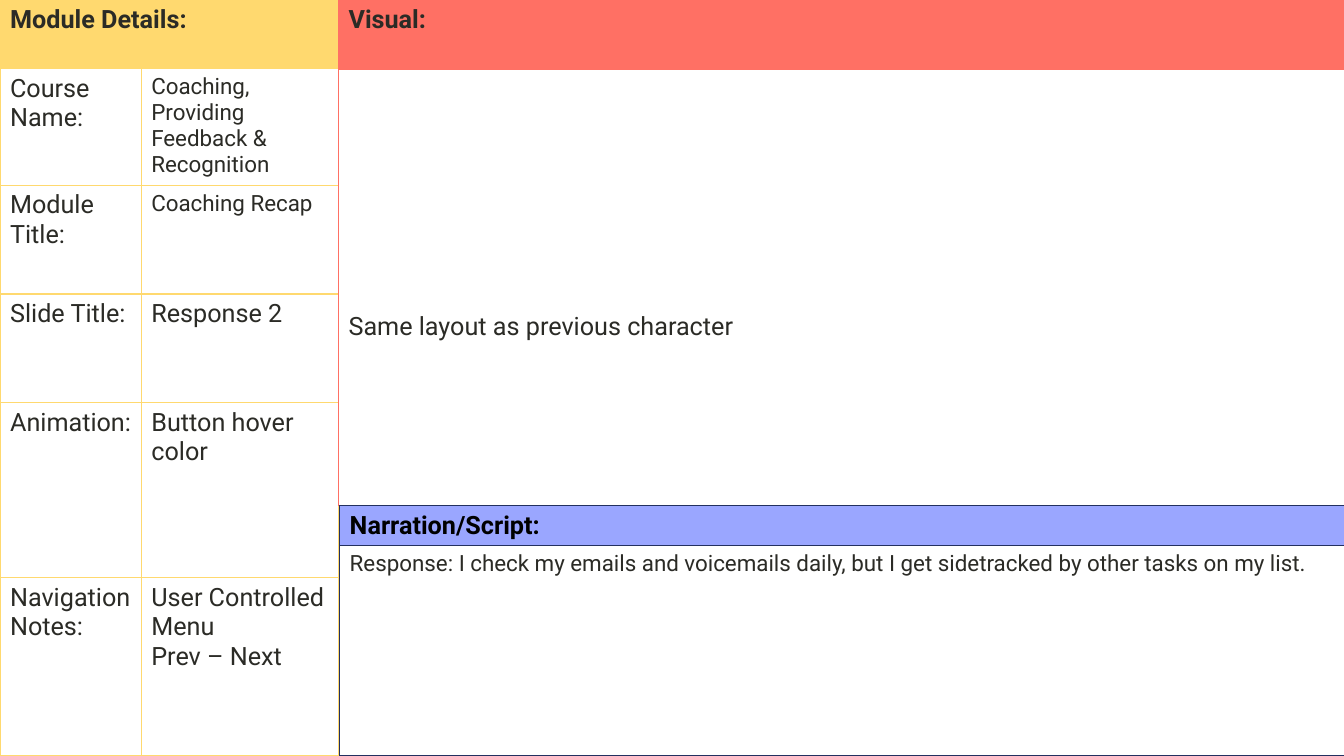
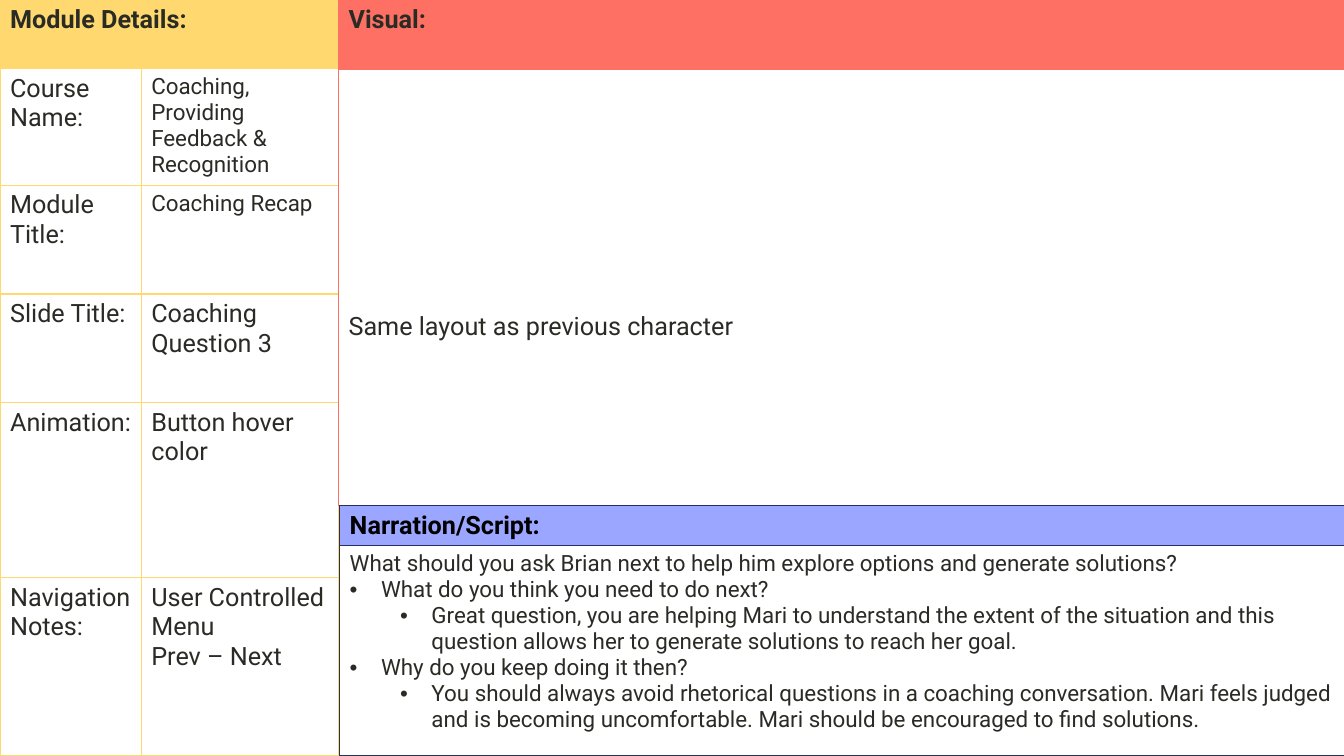
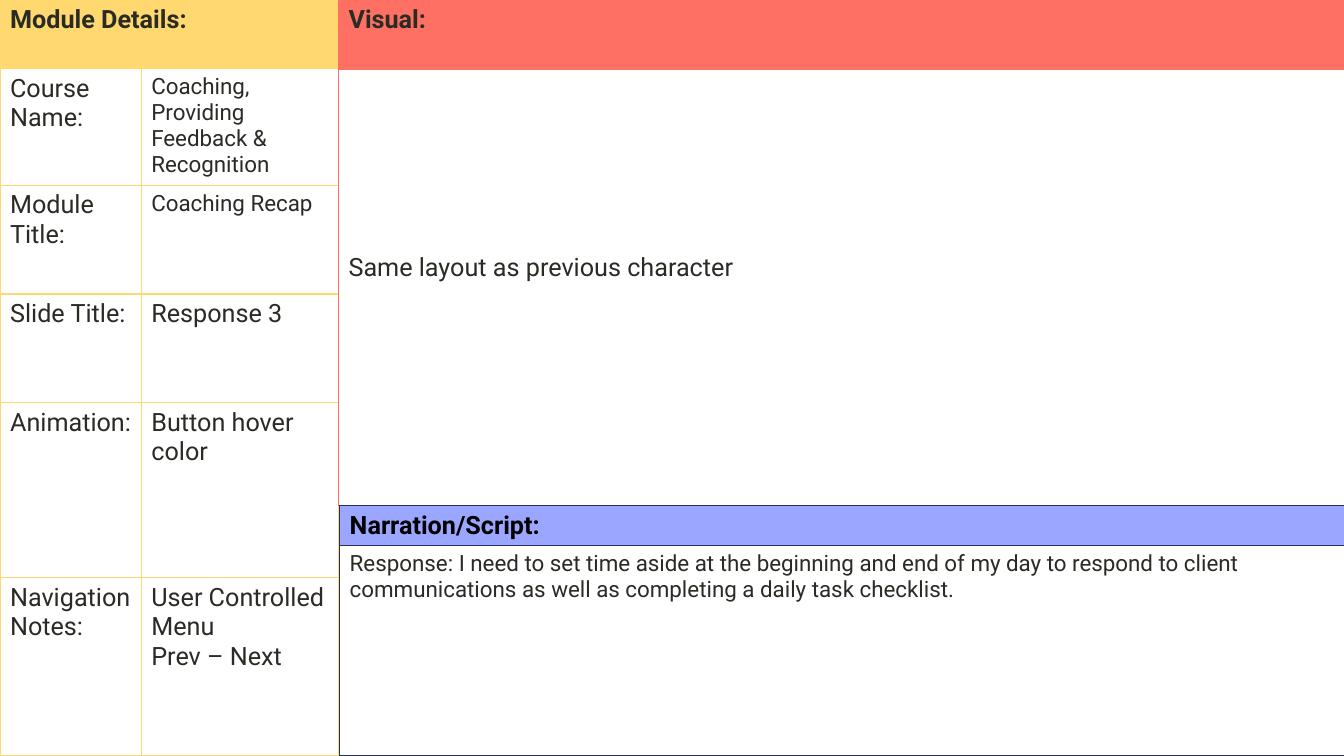
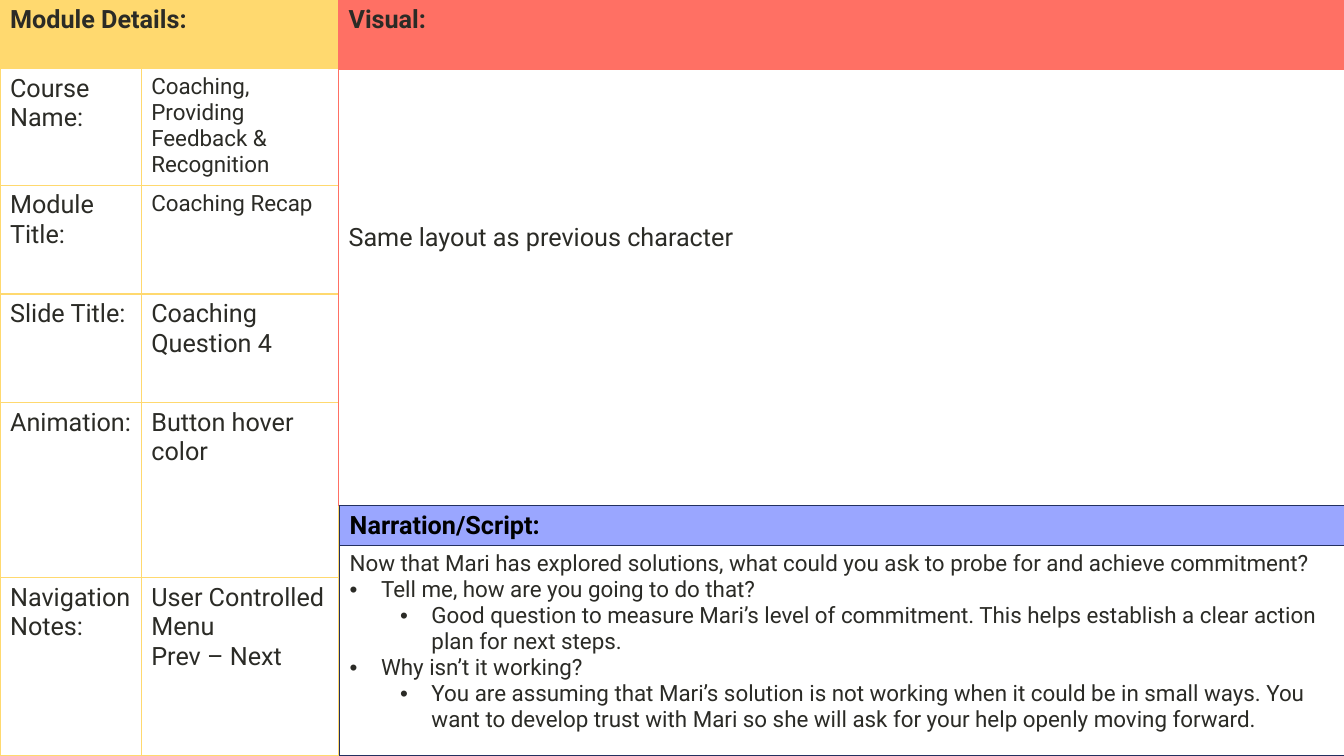
from dataclasses import dataclass

from pptx import Presentation
from pptx.dml.color import RGBColor
from pptx.oxml.ns import qn
from pptx.util import Cm, Pt
from lxml.etree import SubElement

FONT = "Roboto"
COLORS = {
    "background": "F9F9F9",
    "paper": "FFFFFF",
    "ink": "2B2B26",
    "black": "000000",
    "details": "FFD96F",
    "visual": "FF7064",
    "narration": "9AA6FF",
    "narration_line": "233060",
}
SLIDE_WIDTH, SLIDE_HEIGHT = 33.87, 19.05
DETAIL_COLUMNS = [3.56, 4.98]
DETAIL_ROWS = [1.73, 2.94, 2.74, 2.74, 4.41, 4.48]
VISUAL_LEFT, VISUAL_WIDTH = 8.53, 25.35
VISUAL_ROWS = [1.74, 11]
NARRATION_LEFT = 8.56
NARRATION_TOP, NARRATION_HEIGHT = 12.74, 1
SCRIPT_TOP, SCRIPT_HEIGHT = 13.75, 5.29
LINE_HEIGHT = 0.75
TOP_MARGIN = 0.13
BULLET_HANG = 0.79
LEVEL_STEP = 1.27


@dataclass(frozen=True)
class Line:
    text: str
    bullet_level: int | None = None


@dataclass(frozen=True)
class Block:
    """The text and look of one cell."""
    lines: list[Line]
    size: int = 18
    bold: bool = False
    color: str = "ink"
    fill: str = "paper"
    lines_down: int = 0


@dataclass(frozen=True)
class Storyboard:
    slide_title: str
    visual_lines_down: int
    narration: list[Line]


def block(*texts: str, size: int = 18) -> Block:
    return Block([Line(text) for text in texts], size)


def header(text: str, fill: str, color: str = "ink") -> Block:
    return Block([Line(text)], bold=True, color=color, fill=fill)


def rgb(name: str) -> RGBColor:
    return RGBColor.from_string(COLORS[name])


def set_borders(cell, color: str) -> None:
    properties = cell._tc.get_or_add_tcPr()
    for side in "LRTB":
        line = SubElement(properties, qn(f"a:ln{side}"), w=str(Pt(1)))
        fill = SubElement(line, qn("a:solidFill"))
        SubElement(fill, qn("a:srgbClr"), val=COLORS[color])


def set_bullet(paragraph, level: int) -> None:
    paragraph.level = level
    properties = paragraph._p.get_or_add_pPr()
    properties.set("marL", str(Cm(BULLET_HANG + level * LEVEL_STEP)))
    properties.set("indent", str(-Cm(BULLET_HANG)))
    SubElement(properties, qn("a:buFont"), typeface="Arial")
    SubElement(properties, qn("a:buChar"), char="•")


def write_block(cell, content: Block) -> None:
    cell.fill.solid()
    cell.fill.fore_color.rgb = rgb(content.fill)
    cell.margin_top = Cm(TOP_MARGIN + content.lines_down * LINE_HEIGHT)
    frame = cell.text_frame
    for index, line in enumerate(content.lines):
        paragraph = frame.add_paragraph() if index else frame.paragraphs[0]
        if line.bullet_level is not None:
            set_bullet(paragraph, line.bullet_level)
        run = paragraph.add_run()
        run.text = line.text
        run.font.name = FONT
        run.font.size = Pt(content.size)
        run.font.bold = content.bold
        run.font.color.rgb = rgb(content.color)


def add_panel(slide, left: float, top: float, columns: list[float], rows: list[float],
              border: str, contents: list[list[Block]]) -> None:
    """Draw a bordered table; a row with a single block spans all columns."""
    table = slide.shapes.add_table(
        len(rows), len(columns), Cm(left), Cm(top), Cm(sum(columns)), Cm(sum(rows))
    ).table
    table.first_row = table.horz_banding = False
    for column, width in zip(table.columns, columns):
        column.width = Cm(width)
    last = len(columns) - 1
    for row_index, (height, blocks) in enumerate(zip(rows, contents)):
        table.rows[row_index].height = Cm(height)
        if len(blocks) <= last:
            table.cell(row_index, 0).merge(table.cell(row_index, last))
        for index in range(len(columns)):
            set_borders(table.cell(row_index, index), border)
        for index, content in enumerate(blocks):
            write_block(table.cell(row_index, index), content)


def add_storyboard(deck, board: Storyboard) -> None:
    slide = deck.slides.add_slide(deck.slide_layouts[6])
    slide.background.fill.solid()
    slide.background.fill.fore_color.rgb = rgb("background")

    details = [
        [header("Module Details:", "details")],
        [block("Course Name:"), block("Coaching, Providing Feedback & Recognition", size=16)],
        [block("Module Title:"), block("Coaching Recap", size=16)],
        [block("Slide Title:"), block(board.slide_title)],
        [block("Animation:"), block("Button hover color")],
        [block("Navigation Notes:"), block("User Controlled", "Menu", "Prev – Next")],
    ]
    add_panel(slide, 0, 0, DETAIL_COLUMNS, DETAIL_ROWS, "details", details)

    visual = Block([Line("Same layout as previous character")],
                   lines_down=board.visual_lines_down)
    add_panel(slide, VISUAL_LEFT, 0, [VISUAL_WIDTH], VISUAL_ROWS, "visual",
              [[header("Visual:", "visual")], [visual]])

    add_panel(slide, NARRATION_LEFT, NARRATION_TOP, [VISUAL_WIDTH], [NARRATION_HEIGHT],
              "narration_line", [[header("Narration/Script:", "narration", "black")]])
    add_panel(slide, NARRATION_LEFT, SCRIPT_TOP, [VISUAL_WIDTH], [SCRIPT_HEIGHT],
              "narration_line", [[Block(board.narration, size=16)]])


STORYBOARDS = [
    Storyboard("Response 2", 8, [
        Line("Response: I check my emails and voicemails daily, but I get sidetracked "
             "by other tasks on my list."),
    ]),
    Storyboard("Coaching Question 3", 8, [
        Line("What should you ask Brian next to help him explore options and generate solutions?"),
        Line("What do you think you need to do next?", 0),
        Line("Great question, you are helping Mari to understand the extent of the situation "
             "and this question allows her to generate solutions to reach her goal.", 1),
        Line("Why do you keep doing it then?", 0),
        Line("You should always avoid rhetorical questions in a coaching conversation. "
             "Mari feels judged and is becoming uncomfortable. "
             "Mari should be encouraged to find solutions.", 1),
    ]),
    Storyboard("Response 3", 6, [
        Line("Response: I need to set time aside at the beginning and end of my day to respond "
             "to client communications as well as completing a daily task checklist."),
    ]),
    Storyboard("Coaching Question 4", 5, [
        Line("Now that Mari has explored solutions, what could you ask to probe for "
             "and achieve commitment?"),
        Line("Tell me, how are you going to do that?", 0),
        Line("Good question to measure Mari’s level of commitment. "
             "This helps establish a clear action plan for next steps.", 1),
        Line("Why isn’t it working?", 0),
        Line("You are assuming that Mari’s solution is not working when it could be in small "
             "ways. You want to develop trust with Mari so she will ask for your help openly "
             "moving forward.", 1),
    ]),
]


def main() -> None:
    deck = Presentation()
    deck.slide_width, deck.slide_height = Cm(SLIDE_WIDTH), Cm(SLIDE_HEIGHT)
    for board in STORYBOARDS:
        add_storyboard(deck, board)
    deck.save("out.pptx")


if __name__ == "__main__":
    main()
